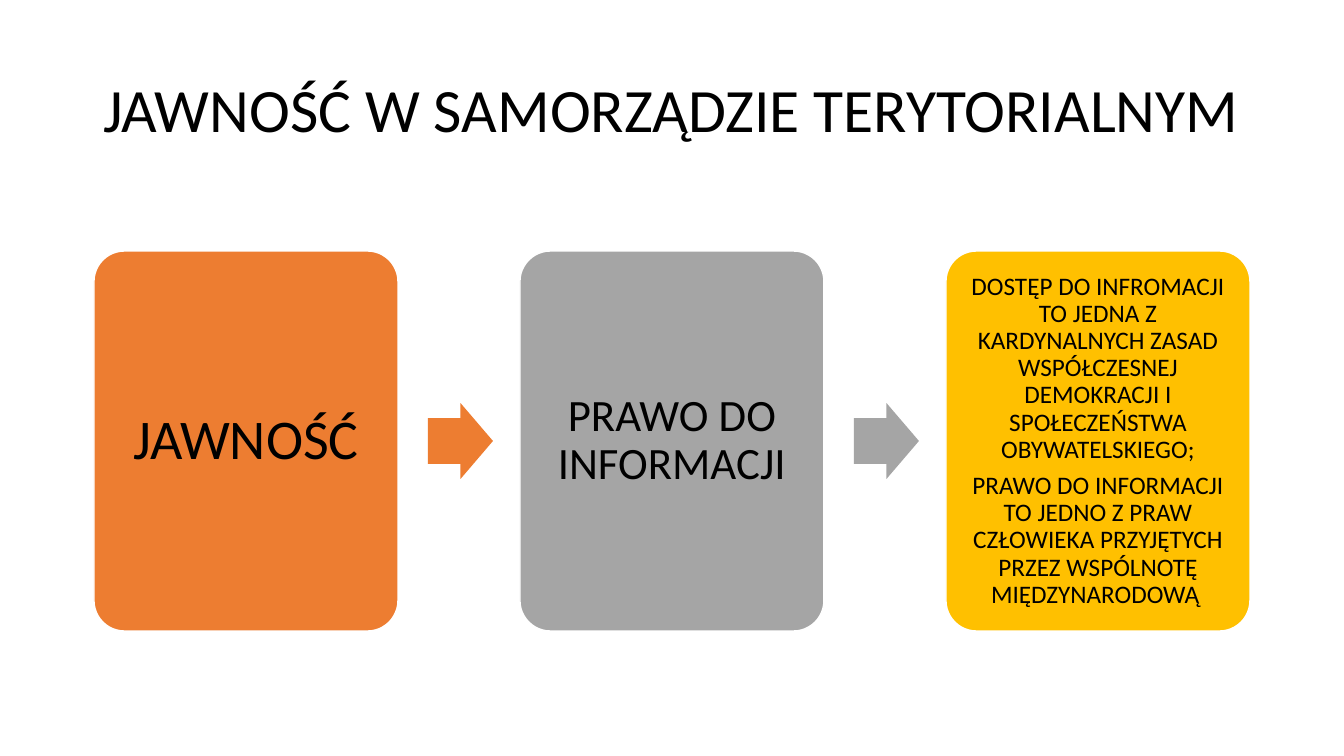
"""Build a slide with three process cards joined by block arrows."""
from pptx import Presentation
from pptx.dml.color import RGBColor
from pptx.enum.shapes import MSO_SHAPE
from pptx.enum.text import MSO_ANCHOR, MSO_AUTO_SIZE, PP_ALIGN
from pptx.util import Emu, Pt

EMU_PER_PX = 914400 / 100.8
COLORS = {
    "text": "000000",
    "outline": "FFFFFF",
    "orange": "ED7D31",
    "gray": "A5A5A5",
    "gold": "FFC000",
}
CARDS = [
    ("orange", 40, 17, ["JAWNOŚĆ"]),
    ("gray", 32, 13, ["PRAWO DO INFORMACJI"]),
    ("gold", 18, 7, [
        "DOSTĘP DO INFROMACJI TO JEDNA Z KARDYNALNYCH ZASAD WSPÓŁCZESNEJ "
        "DEMOKRACJI I SPOŁECZEŃSTWA OBYWATELSKIEGO;",
        "PRAWO DO INFORMACJI TO JEDNO Z PRAW CZŁOWIEKA PRZYJĘTYCH PRZEZ "
        "WSPÓLNOTĘ MIĘDZYNARODOWĄ ",
    ]),
]
CARD_LEFT, CARD_TOP, CARD_WIDTH, CARD_HEIGHT = 94, 251, 304, 380
CARD_PITCH = 426
ARROW_OFFSET, ARROW_WIDTH, ARROW_HEIGHT = 334, 65, 76


def px(n):
    """Convert pixels to EMU."""
    return Emu(round(n * EMU_PER_PX))


def rgb(name):
    """Look up a named colour."""
    return RGBColor.from_string(COLORS[name])


def write(tf, paragraphs, size, align=PP_ALIGN.CENTER, inset=None):
    """Fill a text frame with formatted, vertically centred paragraphs."""
    tf.word_wrap = True
    tf.auto_size = MSO_AUTO_SIZE.NONE
    tf.vertical_anchor = MSO_ANCHOR.MIDDLE
    if inset is not None:
        tf.margin_left = tf.margin_right = px(inset)
        tf.margin_top = tf.margin_bottom = px(inset)
    for i, text in enumerate(paragraphs):
        p = tf.add_paragraph() if i else tf.paragraphs[0]
        p.alignment = align
        p.line_spacing = 0.9
        p.space_before = Pt(0.35 * size if i else 0)
        r = p.add_run()
        r.text = text
        r.font.name = "Calibri"
        r.font.size = Pt(size)
        r.font.color.rgb = rgb("text")


def add_block(s, kind, x, y, w, h, fill, adjustments):
    """Add a filled preset shape without outline or shadow."""
    sp = s.shapes.add_shape(kind, px(x), px(y), px(w), px(h))
    for i, value in enumerate(adjustments):
        sp.adjustments[i] = value
    sp.shadow.inherit = False
    sp.fill.solid()
    sp.fill.fore_color.rgb = rgb(fill)
    sp.line.fill.background()
    return sp


def add_card(s, x, fill, size, inset, paragraphs):
    """Add a rounded card with its text."""
    sp = add_block(s, MSO_SHAPE.ROUNDED_RECTANGLE, x, CARD_TOP,
                   CARD_WIDTH, CARD_HEIGHT, fill, [0.1])
    sp.line.color.rgb = rgb("outline")
    sp.line.width = Pt(1)
    write(sp.text_frame, paragraphs, size, inset=inset)


def add_arrow(s, x, fill):
    """Add a block arrow centred on the height of the cards."""
    y = CARD_TOP + (CARD_HEIGHT - ARROW_HEIGHT) // 2
    add_block(s, MSO_SHAPE.RIGHT_ARROW, x, y, ARROW_WIDTH, ARROW_HEIGHT,
              fill, [0.6, 0.5])


def add_title(s, text):
    """Place and fill the title placeholder."""
    sp = s.shapes.title
    sp.left, sp.top, sp.width, sp.height = px(93), px(40), px(1159), px(146)
    write(sp.text_frame, [text], 44, align=PP_ALIGN.LEFT)


def main():
    """Build and save the slide."""
    prs = Presentation()
    prs.slide_width, prs.slide_height = px(1344), px(756)
    s = prs.slides.add_slide(prs.slide_layouts[5])
    add_title(s, "JAWNOŚĆ W SAMORZĄDZIE TERYTORIALNYM")
    for i, (fill, size, inset, paragraphs) in enumerate(CARDS):
        x = CARD_LEFT + i * CARD_PITCH
        add_card(s, x, fill, size, inset, paragraphs)
        if i < len(CARDS) - 1:
            add_arrow(s, x + ARROW_OFFSET, fill)
    prs.save("out.pptx")


if __name__ == "__main__":
    main()
